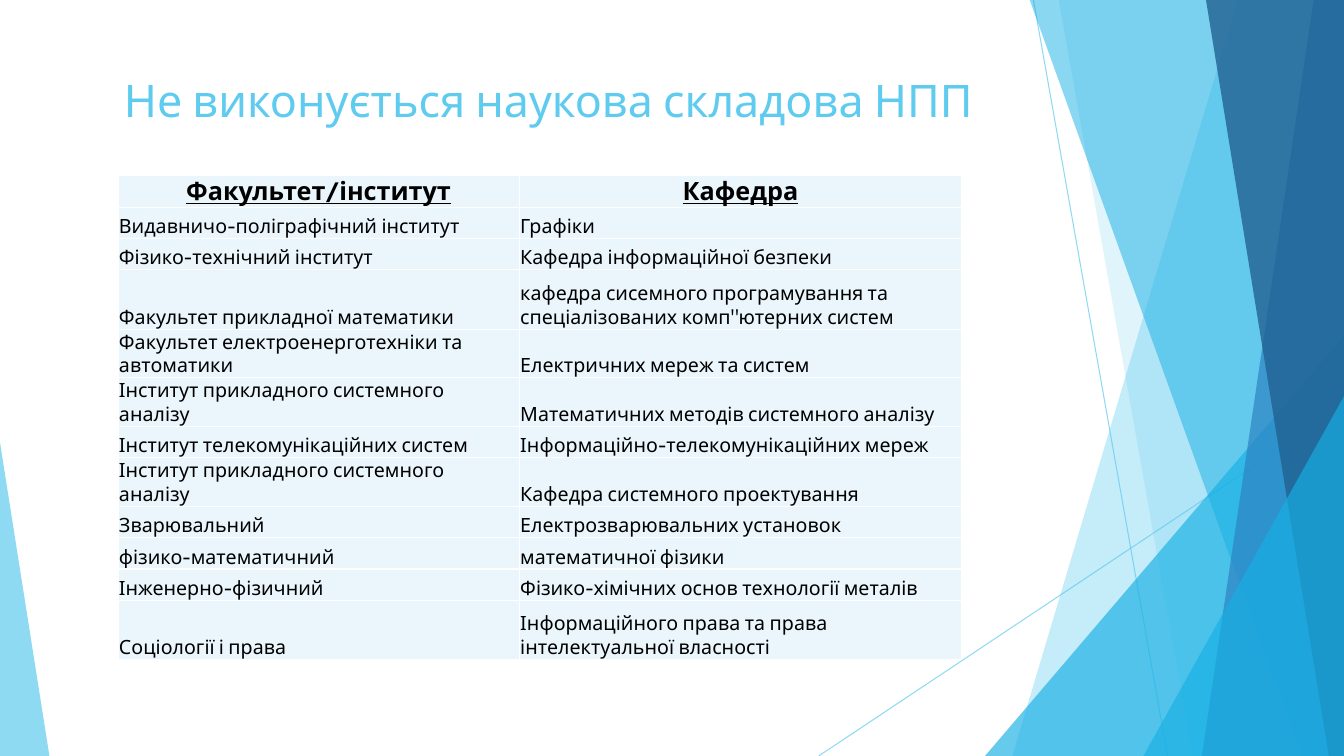
from lxml import etree
from pptx import Presentation
from pptx.dml.color import RGBColor
from pptx.enum.shapes import MSO_CONNECTOR, MSO_SHAPE
from pptx.enum.text import MSO_ANCHOR, PP_ALIGN
from pptx.oxml.ns import qn
from pptx.util import Inches, Pt

STRAIGHT = MSO_CONNECTOR.STRAIGHT
TRIANGLE = MSO_SHAPE.ISOSCELES_TRIANGLE
TOP, BOTTOM = MSO_ANCHOR.TOP, MSO_ANCHOR.BOTTOM
LEFT, CENTER = PP_ALIGN.LEFT, PP_ALIGN.CENTER

SKY = RGBColor(0x5F, 0xCB, 0xEF)
CYAN = RGBColor(0x17, 0xB0, 0xE4)
BLUE = RGBColor(0x2E, 0x83, 0xC3)
NAVY = RGBColor(0x22, 0x62, 0x92)
PALE = RGBColor(0xEA, 0xF6, 0xFC)
BLACK = RGBColor(0, 0, 0)
WHITE = RGBColor(0xFF, 0xFF, 0xFF)
FONT = "Cabin"
WIDTH, HEIGHT = 13.33, 7.5

TITLE = "Не виконується наукова складова НПП"
HEADER = ("Факультет/інститут", "Кафедра")
DEPARTMENTS = [
    ("Видавничо-поліграфічний інститут", "Графіки"),
    ("Фізико-технічний інститут", "Кафедра інформаційної безпеки"),
    ("Факультет прикладної математики",
     "кафедра сисемного програмування та спеціалізованих комп\"ютерних систем"),
    ("Факультет електроенерготехніки та автоматики", "Електричних мереж та систем"),
    ("Інститут прикладного системного аналізу", "Математичних методів системного аналізу"),
    ("Інститут телекомунікаційних систем", "Інформаційно-телекомунікаційних мереж"),
    ("Інститут прикладного системного аналізу", "Кафедра системного проектування"),
    ("Зварювальний", "Електрозварювальних установок"),
    ("фізико-математичний", "математичної фізики"),
    ("Інженерно-фізичний", "Фізико-хімічних основ технології металів"),
    ("Соціології і права", "Інформаційного права та права інтелектуальної власності"),
]
COLUMN_WIDTHS = (3.98, 4.39)
ROW_HEIGHT, TALL_ROW_HEIGHT = 0.31, 0.59
TALL_ROWS = (3, 11)

RAYS = [((10.25, 0), (11.58, HEIGHT)), ((WIDTH, 4.03), (8.12, HEIGHT))]
# Back to front. A band is (top x, bottom x) and reaches the right edge;
# a triangle is (left, top, width, apex position).
FACETS = [
    ("band", (12.28, 10.04), SKY, 36),
    ("band", (10.5, 11.83), SKY, 20),
    ("triangle", (9.77, 3.33, 3.56, 1), CYAN, 66),
    ("band", (10.21, 12.91), CYAN, 50),
    ("band", (13.03, 11.92), BLUE, 70),
    ("band", (11.96, 13.18), NAVY, 80),
    ("triangle", (11.34, 3.93, 1.99, 1), CYAN, 66),
    ("triangle", (0, 4.39, 0.49, 0), SKY, 70),
]


def set_opacity(shape, percent):
    for color in shape._element.spPr.iter(qn("a:srgbClr")):
        etree.SubElement(color, qn("a:alpha"), val=str(percent * 1000))


def add_ray(slide, start, end):
    ray = slide.shapes.add_connector(STRAIGHT, *map(Inches, start + end))
    ray.line.color.rgb = SKY
    ray.line.width = Pt(0.75)
    set_opacity(ray, 70)
    etree.SubElement(ray._element.spPr, qn("a:effectLst"))


def add_facet(slide, kind, geometry, color, opacity):
    if kind == "band":
        top_x, bottom_x = geometry
        corners = [(top_x, -0.01), (WIDTH, -0.01), (WIDTH, HEIGHT), (bottom_x, HEIGHT)]
        points = [(Inches(x), Inches(y)) for x, y in corners]
        outline = slide.shapes.build_freeform(*points[0])
        outline.add_line_segments(points[1:], close=True)
        facet = outline.convert_to_shape()
    else:
        left, top, width, apex = geometry
        facet = slide.shapes.add_shape(
            TRIANGLE, Inches(left), Inches(top), Inches(width), Inches(HEIGHT - top))
        facet.adjustments[0] = apex
    facet.shadow.inherit = False
    facet.fill.solid()
    facet.fill.fore_color.rgb = color
    facet.line.fill.background()
    set_opacity(facet, opacity)


def write(frame, text, size, color=BLACK, align=LEFT, bold=False, underline=False):
    para = frame.paragraphs[0]
    para.alignment = align
    span = para.add_run()
    span.text = text
    span.font.name = FONT
    span.font.size = Pt(size)
    span.font.color.rgb = color
    span.font.bold = bold
    span.font.underline = underline


def set_borders(cell):
    properties = cell._tc.get_or_add_tcPr()
    for side in ("a:lnL", "a:lnR", "a:lnT", "a:lnB"):
        line = etree.SubElement(properties, qn(side), w=str(Pt(1)))
        fill = etree.SubElement(line, qn("a:solidFill"))
        etree.SubElement(fill, qn("a:srgbClr"), val=str(WHITE))


def add_department_table(slide):
    rows = [HEADER] + DEPARTMENTS
    heights = [TALL_ROW_HEIGHT if i in TALL_ROWS else ROW_HEIGHT for i in range(len(rows))]
    table = slide.shapes.add_table(
        len(rows), len(HEADER), Inches(1.17), Inches(1.74),
        Inches(sum(COLUMN_WIDTHS)), Inches(sum(heights))).table
    table.horz_banding = False
    for column, width in zip(table.columns, COLUMN_WIDTHS):
        column.width = Inches(width)
    for i, texts in enumerate(rows):
        table.rows[i].height = Inches(heights[i])
        for j, text in enumerate(texts):
            cell = table.cell(i, j)
            cell.margin_left = cell.margin_right = cell.margin_top = Inches(0.01)
            cell.margin_bottom = 0
            cell.vertical_anchor = BOTTOM
            set_borders(cell)
            cell.fill.solid()
            cell.fill.fore_color.rgb = PALE
            if i == 0:
                write(cell.text_frame, text, 18, align=CENTER, bold=True, underline=True)
            else:
                write(cell.text_frame, text, 14)


def main():
    deck = Presentation()
    deck.slide_width, deck.slide_height = Inches(WIDTH), Inches(HEIGHT)
    page = deck.slides.add_slide(deck.slide_layouts[5])
    for start, end in RAYS:
        add_ray(page, start, end)
    for facet in FACETS:
        add_facet(page, *facet)
    title = page.shapes.title
    title.left, title.top = Inches(0.74), Inches(0.67)
    title.width, title.height = Inches(9.4), Inches(0.81)
    title.text_frame.vertical_anchor = TOP
    write(title.text_frame, TITLE, 32, color=SKY, align=CENTER)
    add_department_table(page)
    deck.save("out.pptx")


if __name__ == "__main__":
    main()
